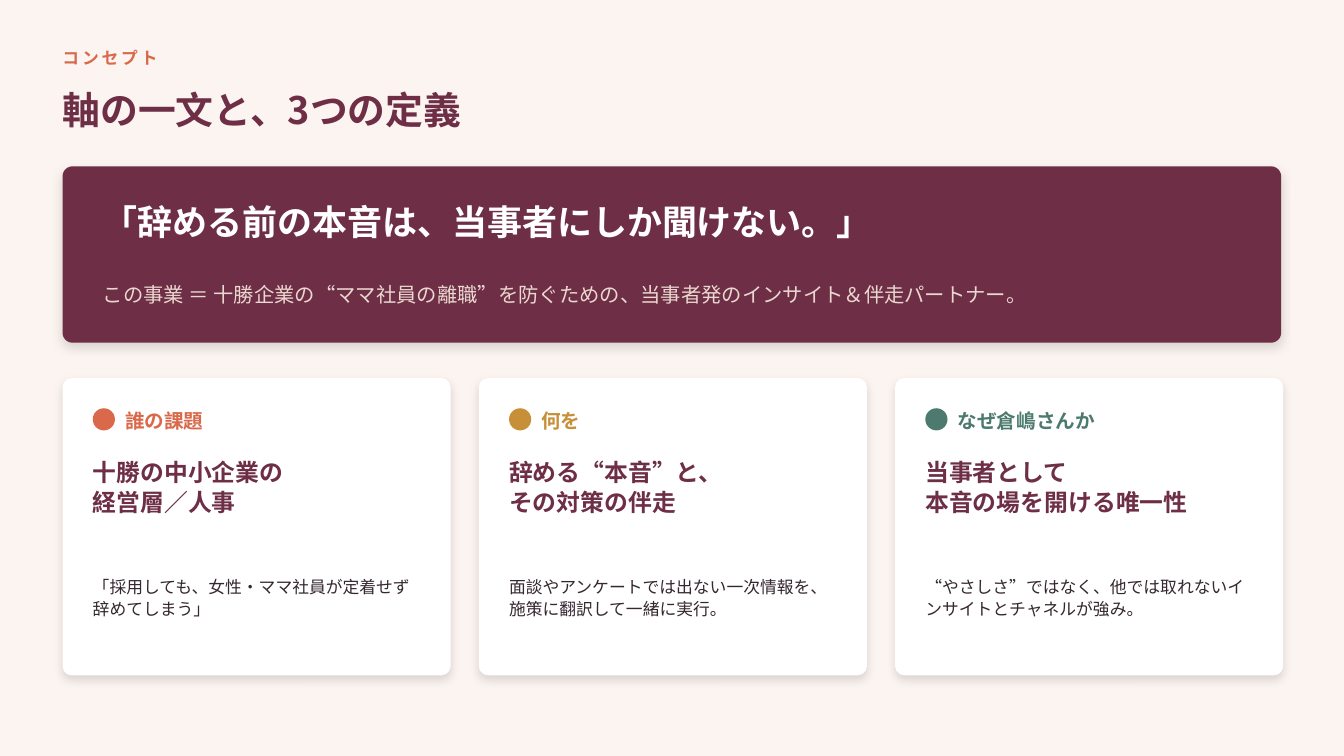
from lxml.etree import SubElement as Sub
from pptx import Presentation
from pptx.dml.color import RGBColor
from pptx.enum.shapes import MSO_SHAPE as Kind
from pptx.enum.text import MSO_ANCHOR as Anchor
from pptx.oxml.ns import qn
from pptx.util import Pt

PLUM, WHITE, INK = "6D2E46", "FFFFFF", "352730"
CORAL, GOLD, GREEN = "D9694A", "C79038", "4C7A6E"
CREAM, SAND = "FBF4F0", "EAD7CF"

LEFT, WIDE = 44.64, 870.48
STEP, TOP = 297.36, 270
INSET = 21.6

CARDS = [
    (CORAL, "誰の課題", ["十勝の中小企業の", "経営層／人事"],
     "「採用しても、女性・ママ社員が定着せず辞めてしまう」"),
    (GOLD, "何を", ["辞める“本音”と、", "その対策の伴走"],
     "面談やアンケートでは出ない一次情報を、施策に翻訳して一緒に実行。"),
    (GREEN, "なぜ倉嶋さんか", ["当事者として", "本音の場を開ける唯一性"],
     "“やさしさ”ではなく、他では取れないインサイトとチャネルが強み。"),
]


def paint(fill, color):
    fill.solid()
    fill.fore_color.rgb = RGBColor.from_string(color)


class Deck:
    face = "Noto Sans CJK JP"

    def __init__(self, slide):
        self.slide = slide
        paint(slide.background.fill, CREAM)

    def shape(self, kind, box, color):
        item = self.slide.shapes.add_shape(kind, *map(Pt, box))
        paint(item.fill, color)
        item.line.fill.background()
        item.shadow.inherit = False
        return item

    def panel(self, box, color, curve):
        """Rounded box with a soft shadow below it."""
        item = self.shape(Kind.ROUNDED_RECTANGLE, box, color)
        item.adjustments[0] = curve
        effects = item._element.spPr.find(qn("a:effectLst"))
        shade = Sub(effects, qn("a:outerShdw"), blurRad=str(Pt(7)),
                    dist=str(Pt(3)), dir="5400000", algn="ctr",
                    rotWithShape="0")
        black = Sub(shade, qn("a:srgbClr"), val="000000")
        Sub(black, qn("a:alpha"), val="12000")

    def text(self, box, lines, size, color, bold=False,
             anchor=Anchor.MIDDLE, lead=None, track=0):
        frame = self.slide.shapes.add_textbox(*map(Pt, box)).text_frame
        style = {"word_wrap": True, "vertical_anchor": anchor,
                 "margin_left": 0, "margin_right": 0,
                 "margin_top": 0, "margin_bottom": 0}
        for name, value in style.items():
            setattr(frame, name, value)
        for i, line in enumerate(lines):
            para = frame.add_paragraph() if i else frame.paragraphs[0]
            if lead:
                para.line_spacing = lead
            run = para.add_run()
            run.text = line
            font = {"size": Pt(size), "bold": bold, "name": self.face}
            for name, value in font.items():
                setattr(run.font, name, value)
            paint(run.font.fill, color)
            props = run._r.get_or_add_rPr()
            Sub(props, qn("a:ea"), typeface=self.face)
            if track:
                props.set("spc", str(track * 100))

    def card(self, x, color, label, head, body):
        self.panel((x, TOP, 277.2, 212.4), WHITE, 0.031)
        x += INSET
        self.shape(Kind.OVAL, (x, TOP + INSET, 15.84, 15.84), color)
        self.text((x + 23.04, 285.84, 212.4, 28.8), [label], 14, color, True)
        self.text((x, 326.16, 234, 79.2), head, 17, PLUM, True,
                  Anchor.TOP, 1.05)
        self.text((x, 410.4, 234, 64.8), [body], 12, INK,
                  anchor=Anchor.TOP, lead=1.1)


def main():
    show = Presentation()
    show.slide_width, show.slide_height = Pt(960), Pt(540)
    deck = Deck(show.slides.add_slide(show.slide_layouts[6]))

    deck.text((LEFT, 30.24, 792, 21.6), ["コンセプト"], 12, CORAL, True,
              track=2)
    deck.text((LEFT, 51.84, WIDE, 51.84), ["軸の一文と、3つの定義"],
              27, PLUM, True)

    deck.panel((LEFT, 118.8, WIDE, 126), PLUM, 0.057)
    deck.text((73.44, 133.2, 812.88, 50.4),
              ["「辞める前の本音は、当事者にしか聞けない。」"], 25, WHITE, True)
    deck.text((73.44, 188.64, 812.88, 43.2),
              ["この事業 ＝ 十勝企業の“ママ社員の離職”を防ぐための、"
               "当事者発のインサイト＆伴走パートナー。"], 14.5, SAND)

    for i, card in enumerate(CARDS):
        deck.card(LEFT + i * STEP, *card)

    show.save("out.pptx")


if __name__ == "__main__":
    main()
